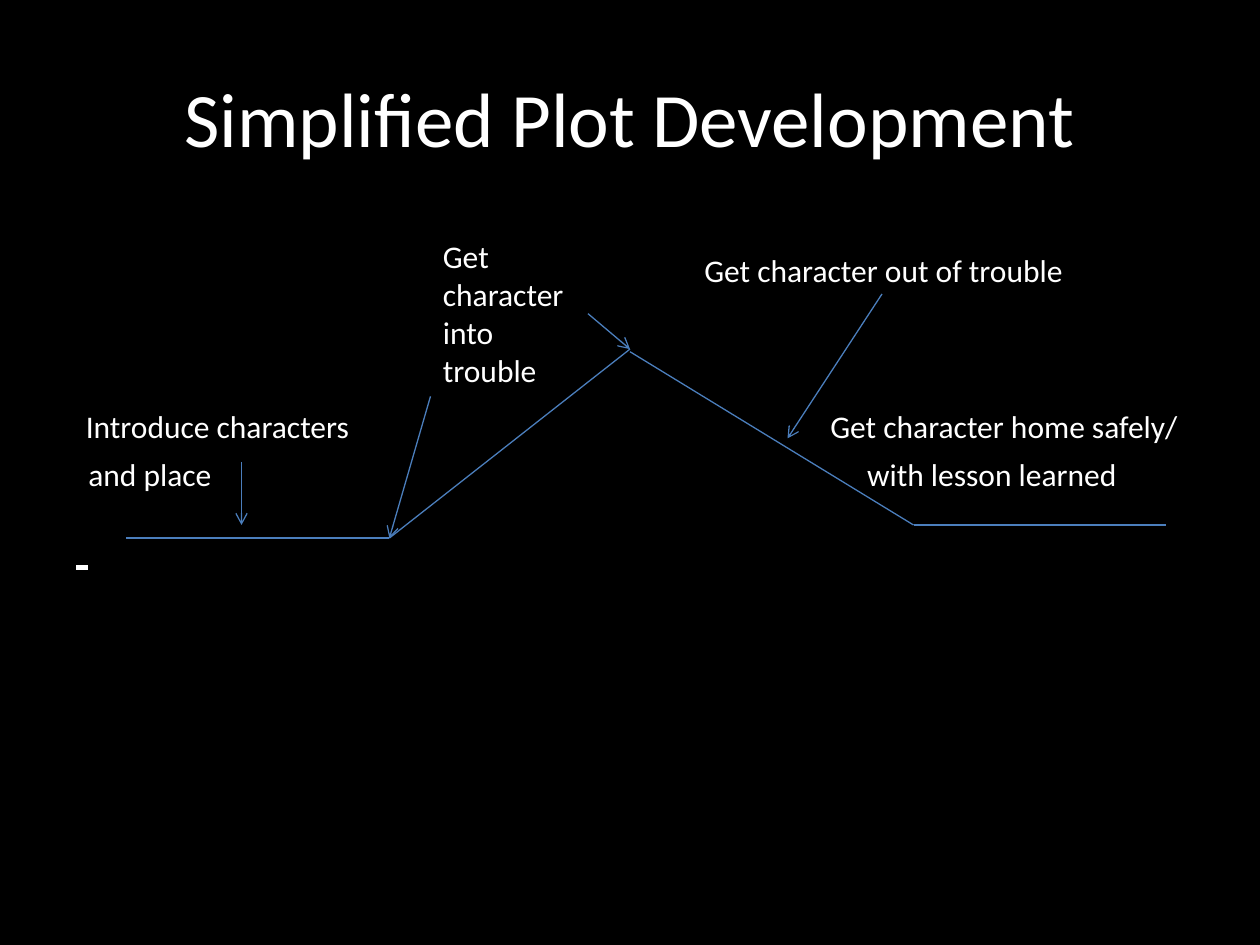
from lxml.etree import SubElement
from pptx import Presentation
from pptx.dml.color import RGBColor as RGB
from pptx.enum.shapes import MSO_CONNECTOR as Connector
from pptx.enum.text import MSO_ANCHOR as Anchor, PP_ALIGN as Align
from pptx.oxml.ns import qn
from pptx.util import Pt

COLORS = {"background": "000000", "text": "FFFFFF", "plot": "4B7EBC"}
RIGHT_SIDE = 3


class PlotSlide:
    """Holds the current slide and the style of its text and lines."""

    font = "Calibri"
    label_size = 18
    line_gap = 6

    def __init__(self, slide):
        self.slide = slide
        fill = slide.background.fill
        fill.solid()
        fill.fore_color.rgb = RGB.from_string(COLORS["background"])

    def text(self, lines, left, top, width, height, size=label_size,
             align=Align.LEFT, anchor=Anchor.TOP, inset=0, indent=0):
        """Add one paragraph per line; indent applies after the first."""
        box = self.slide.shapes.add_textbox(Pt(left), Pt(top), Pt(width), Pt(height))
        frame = box.text_frame
        frame.word_wrap = True
        frame.vertical_anchor = anchor
        frame.margin_left = frame.margin_right = Pt(inset)
        frame.margin_top = frame.margin_bottom = Pt(inset / 2)
        frame.text = "\n".join(lines)
        for number, paragraph in enumerate(frame.paragraphs):
            paragraph.alignment = align
            paragraph.font.name = self.font
            paragraph.font.size = Pt(size)
            paragraph.font.color.rgb = RGB.from_string(COLORS["text"])
            if number:
                paragraph.space_before = Pt(self.line_gap)
                paragraph._p.get_or_add_pPr().set("marL", str(Pt(indent)))
        return box

    def line(self, start, end, color="plot", weight=0.75):
        connector = self.slide.shapes.add_connector(
            Connector.STRAIGHT, *map(Pt, start + end))
        connector.line.color.rgb = RGB.from_string(COLORS[color])
        connector.line.width = Pt(weight)
        SubElement(connector._element.spPr, qn("a:effectLst"))
        return connector

    def arrow(self, start, end):
        connector = self.line(start, end)
        SubElement(connector.line._get_or_add_ln(), qn("a:tailEnd"), type="arrow")
        return connector


def main():
    deck = Presentation()
    deck.slide_width, deck.slide_height = Pt(720), Pt(540)
    plot = PlotSlide(deck.slides.add_slide(deck.slide_layouts[6]))

    plot.text(["Simplified Plot Development"], 36, 21.6, 648, 90, size=44,
              align=Align.CENTER, anchor=Anchor.MIDDLE, inset=7.2)
    plot.text(["Get character out of trouble"], 402.5, 143.5, 230, 22)
    plot.text(["Introduce characters", "and place"], 49, 232.5, 170, 50, indent=1.5)
    plot.text(["Get character home safely/", "with lesson learned"],
              474.5, 232.5, 220, 50, indent=21)
    plot.line((43.5, 324.3), (50.3, 324.3), color="text", weight=3)

    rise_start, peak, fall_end = (222.5, 307.5), (360, 199.5), (522, 300)
    plot.line(rise_start, peak)
    plot.line((360, 201), fall_end)
    plot.line((72, 307.5), rise_start)
    plot.line(fall_end, (666, 300))

    plot.arrow((138, 264), (138, 300))
    trouble = plot.text(["Get character into trouble"], 246, 132, 90, 94.5, inset=7.2)
    plot.arrow((246, 226.5), rise_start)
    plot.arrow((336, 179.25), peak).begin_connect(trouble, RIGHT_SIDE)
    plot.arrow((504, 168), (450, 250.5))

    deck.save("out.pptx")


if __name__ == "__main__":
    main()
